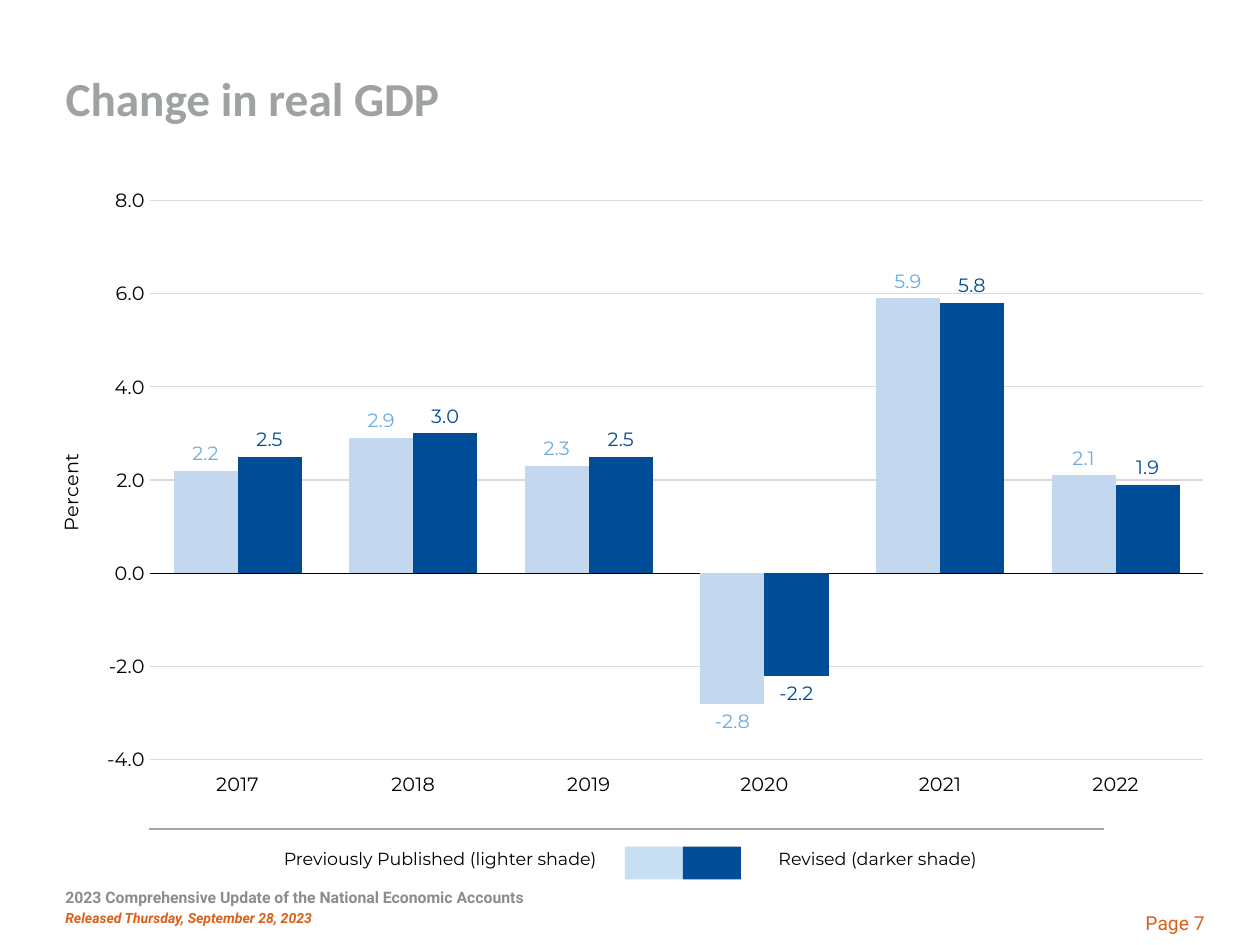
from lxml import etree
from pptx import Presentation
from pptx.chart.data import CategoryChartData
from pptx.dml.color import RGBColor
from pptx.enum.chart import XL_CHART_TYPE, XL_LABEL_POSITION, XL_TICK_LABEL_POSITION, XL_TICK_MARK
from pptx.enum.shapes import MSO_CONNECTOR, MSO_SHAPE
from pptx.enum.text import MSO_ANCHOR, PP_ALIGN
from pptx.oxml.ns import qn
from pptx.util import Inches, Pt

COLUMN = XL_CHART_TYPE.COLUMN_CLUSTERED
OUTSIDE = XL_LABEL_POSITION.OUTSIDE_END
LOW = XL_TICK_LABEL_POSITION.LOW
NO_TICK = XL_TICK_MARK.NONE
STRAIGHT = MSO_CONNECTOR.STRAIGHT
RECT = MSO_SHAPE.RECTANGLE
MIDDLE, TOP = MSO_ANCHOR.MIDDLE, MSO_ANCHOR.TOP
LEFT, RIGHT = PP_ALIGN.LEFT, PP_ALIGN.RIGHT

MARGIN = 0.42
BLACK, ORANGE, BLUE = "000000", "D86018", "004C97"


def rgb(color):
    return RGBColor.from_string(color)


def write(sp, lines, align=LEFT, anchor=TOP):
    tf = sp.text_frame
    tf.word_wrap = True
    tf.vertical_anchor = anchor
    tf.text = "\n".join(line[0] for line in lines)
    for p, (_, font, size, color, bold, italic) in zip(tf.paragraphs, lines):
        p.alignment = align
        p.space_after = Pt(1.1)
        f = p.runs[0].font
        f.name, f.size, f.bold, f.italic = font, Pt(size), bold, italic
        f.color.rgb = rgb(color)


prs = Presentation()
prs.slide_width, prs.slide_height = Inches(10), Inches(7.5)
s = prs.slides.add_slide(prs.slide_layouts[5])

title = s.shapes.title
title.left, title.top = Inches(MARGIN), Inches(0.25)
title.width, title.height = Inches(7.61), Inches(1)
title.text_frame.margin_bottom = 0
write(title, [("Change in real GDP", "Calibri", 27, "9EA2A2", True, False)], LEFT, MIDDLE)

data = CategoryChartData(number_format="#,##0.0")
data.categories = ["2017", "2018", "2019", "2020", "2021", "2022"]
data.add_series("Series 1", (2.2, 2.9, 2.3, -2.8, 5.9, 2.1))
data.add_series("Series 2", (2.5, 3.0, 2.5, -2.2, 5.8, 1.9))
chart = s.shapes.add_chart(COLUMN, Inches(MARGIN), Inches(1.42), Inches(9.16), Inches(5), data).chart
chart.has_legend = False
chart.has_title = False
chart.font.name, chart.font.size = "Montserrat", Pt(11)
chart.font.color.rgb = rgb(BLACK)

plot = chart.plots[0]
plot.gap_width, plot.overlap = 74, 0
plot.vary_by_categories = False
for series, fill, label in zip(plot.series, ("C3D7EE", BLUE), ("6CACE4", BLUE)):
    series.invert_if_negative = False
    series.format.fill.solid()
    series.format.fill.fore_color.rgb = rgb(fill)
    labels = series.data_labels
    labels.show_value = True
    labels.position = OUTSIDE
    labels.number_format, labels.number_format_is_linked = "#,##0.0", False
    labels.font.name, labels.font.size = "Montserrat", Pt(11)
    labels.font.color.rgb = rgb(label)

years = chart.category_axis
years.tick_label_position = LOW
years.format.line.color.rgb = rgb(BLACK)
years.format.line.width = Pt(0.75)
values = chart.value_axis
values.minimum_scale, values.maximum_scale, values.major_unit = -4, 8, 2
values.tick_labels.number_format = "#,##0.0"
values.tick_labels.number_format_is_linked = False
values.format.line.fill.background()
values.major_gridlines.format.line.color.rgb = rgb("D9D9D9")
values.major_gridlines.format.line.width = Pt(0.75)
for axis in (years, values):
    axis.major_tick_mark = axis.minor_tick_mark = NO_TICK
values.axis_title.text_frame.text = "Percent"
f = values.axis_title.text_frame.paragraphs[0].runs[0].font
f.name, f.size, f.bold = "Montserrat", Pt(11), False
f.color.rgb = rgb(BLACK)

area = chart.plots[0]._element.getparent()
for old in area.findall(qn("c:layout")):
    area.remove(old)
layout = etree.Element(qn("c:layout"))
manual = etree.SubElement(layout, qn("c:manualLayout"))
for tag, val in (("layoutTarget", "inner"), ("xMode", "edge"), ("yMode", "edge"),
                 ("x", "0.084"), ("y", "0.034"), ("w", "0.913"), ("h", "0.888")):
    etree.SubElement(manual, qn("c:" + tag)).set("val", val)
area.insert(0, layout)

rule = s.shapes.add_connector(STRAIGHT, Inches(1.18), Inches(6.58), Inches(8.76), Inches(6.58))
rule.line.color.rgb = rgb("A6A6A6")
rule.line.width = Pt(0.75)
etree.SubElement(rule._element.spPr, qn("a:effectLst"))

for i, color in enumerate(("C7DFF2", BLUE)):
    sp = s.shapes.add_shape(RECT, Inches(4.96 + 0.46 * i), Inches(6.72), Inches(0.46), Inches(0.26))
    sp.shadow.inherit = False
    sp.fill.solid()
    sp.fill.fore_color.rgb = rgb(color)
    sp.line.fill.background()

footer = [("2023 Comprehensive Update of the National Economic Accounts", "Roboto", 9, "8C8C8C", True, False),
          ("Released Thursday, September 28, 2023", "Roboto", 8, ORANGE, True, True)]
texts = [
    (1.1, 6.68, 3.73, 0.32, [("Previously Published (lighter shade)", "Montserrat", 10, BLACK, False, False)], RIGHT, TOP),
    (6.08, 6.68, 2.81, 0.32, [("Revised (darker shade)", "Montserrat", 10, BLACK, False, False)], LEFT, TOP),
    (MARGIN, 7, 7.25, 0.5, footer, LEFT, TOP),
    (8.58, 7.16, 1.08, 0.32, [("Page 7", "Roboto", 11, ORANGE, False, False)], RIGHT, MIDDLE),
]
for x, y, w, h, lines, align, anchor in texts:
    sp = s.shapes.add_textbox(Inches(x), Inches(y), Inches(w), Inches(h))
    write(sp, lines, align, anchor)

prs.save("out.pptx")
